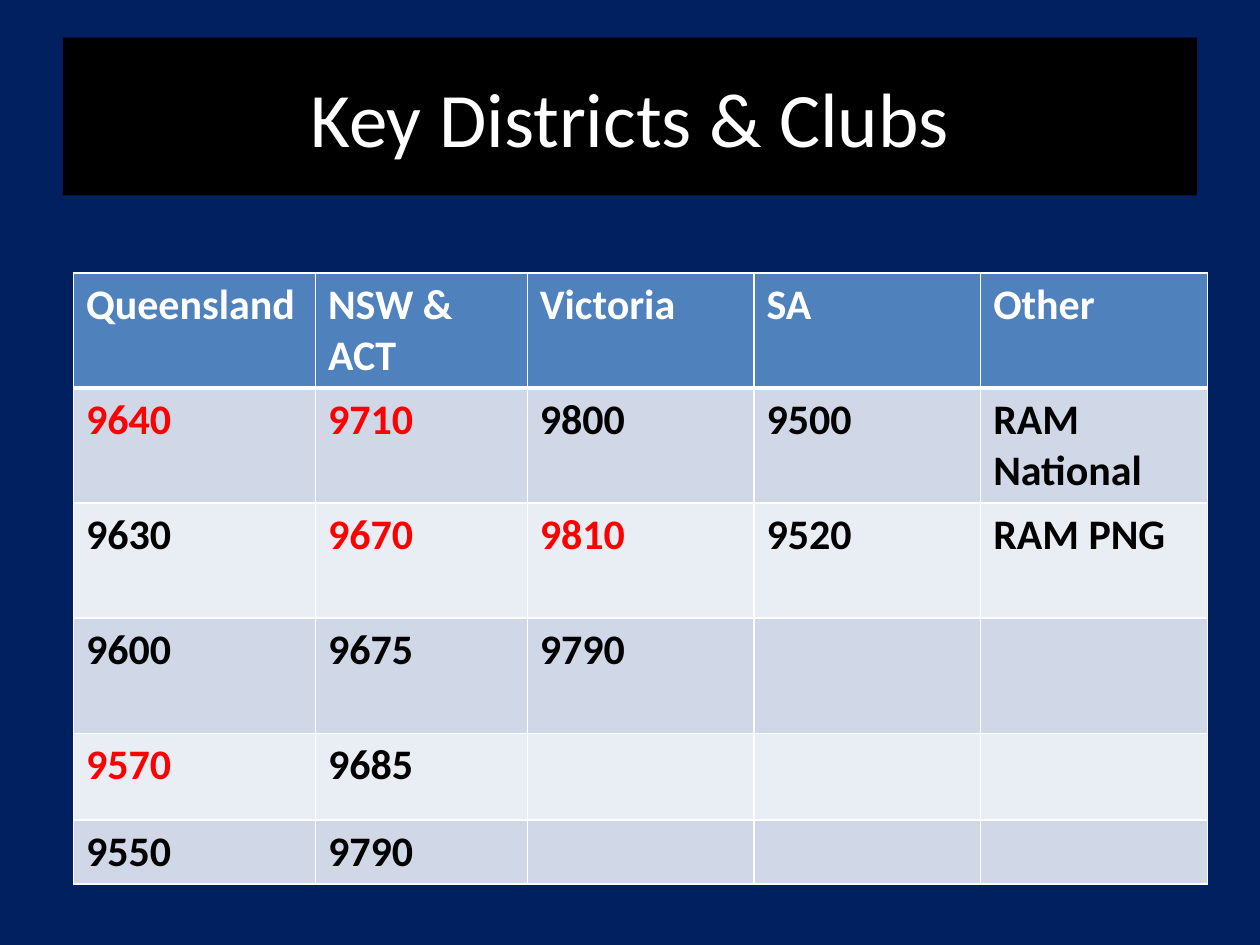
from lxml.etree import SubElement
from pptx import Presentation
from pptx.dml.color import RGBColor
from pptx.enum.shapes import MSO_SHAPE as Shape
from pptx.enum.text import MSO_ANCHOR as Anchor, PP_ALIGN as Align
from pptx.oxml.ns import qn
from pptx.util import Cm, Pt

NAVY = RGBColor(0x00, 0x20, 0x60)
BLACK = RGBColor(0x00, 0x00, 0x00)
WHITE = RGBColor(0xFF, 0xFF, 0xFF)
RED = RGBColor(0xFF, 0x00, 0x00)
HEADER_BLUE = RGBColor(0x4F, 0x81, 0xBD)
BAND_DARK = RGBColor(0xD0, 0xD8, 0xE8)
BAND_LIGHT = RGBColor(0xE9, 0xED, 0xF4)

DISTRICTS = [
    ["Queensland", "NSW & ACT", "Victoria", "SA", "Other"],
    ["9640", "9710", "9800", "9500", "RAM National"],
    ["9630", "9670", "9810", "9520", "RAM PNG"],
    ["9600", "9675", "9790", "", ""],
    ["9570", "9685", "", "", ""],
    ["9550", "9790", "", "", ""],
]
KEY_DISTRICTS = {"9640", "9710", "9670", "9810", "9570"}
COLUMN_WIDTHS = [4.88, 4.27, 4.57, 4.57, 4.57]
ROW_HEIGHTS = [2.32, 2.32, 2.32, 2.32, 1.75, 1.27]


def write_text(frame, text, font="Calibri", size=24, color=BLACK, bold=False, align=Align.LEFT):
    para = frame.paragraphs[0]
    para.alignment = align
    span = para.add_run()
    span.text = text
    span.font.name = font
    span.font.size = Pt(size)
    span.font.bold = bold
    span.font.color.rgb = color


def set_borders(cell, color, widths):
    """Draw cell edges; widths maps the edge letters L, R, T, B to points."""
    properties = cell._tc.get_or_add_tcPr()
    for index, (edge, width) in enumerate(widths.items()):
        line = properties.makeelement(qn(f"a:ln{edge}"), {"w": str(Pt(width))})
        fill = SubElement(line, qn("a:solidFill"))
        SubElement(fill, qn("a:srgbClr"), val=str(color))
        properties.insert(index, line)


class SlideBuilder:
    def __init__(self, page, font="Calibri"):
        self.page = page
        self.font = font

    def background(self, color):
        fill = self.page.background.fill
        fill.solid()
        fill.fore_color.rgb = color

    def title(self, text, left, top, width, height):
        box = self.page.shapes.add_shape(
            Shape.RECTANGLE, Cm(left), Cm(top), Cm(width), Cm(height))
        box.shadow.inherit = False
        box.fill.solid()
        box.fill.fore_color.rgb = BLACK
        box.line.fill.background()
        box.text_frame.word_wrap = True
        box.text_frame.vertical_anchor = Anchor.MIDDLE
        write_text(box.text_frame, text, font=self.font, size=44,
                   color=WHITE, align=Align.CENTER)

    def table(self, rows, left, top, widths, heights):
        table = self.page.shapes.add_table(
            len(rows), len(widths), Cm(left), Cm(top),
            Cm(sum(widths)), Cm(sum(heights))).table
        for column, width in zip(table.columns, widths):
            column.width = Cm(width)
        for row, height in zip(table.rows, heights):
            row.height = Cm(height)
        for row_index, texts in enumerate(rows):
            for column_index, text in enumerate(texts):
                self.cell(table.cell(row_index, column_index), text, row_index)

    def cell(self, cell, text, row_index):
        header = row_index == 0
        band = BAND_DARK if row_index % 2 else BAND_LIGHT
        cell.fill.solid()
        cell.fill.fore_color.rgb = HEADER_BLUE if header else band
        set_borders(cell, WHITE, {"L": 1, "R": 1, "T": 3 if row_index == 1 else 1,
                                  "B": 3 if header else 1})
        if text:
            body_color = RED if text in KEY_DISTRICTS else BLACK
            write_text(cell.text_frame, text, font=self.font, bold=True,
                       color=WHITE if header else body_color)


def main():
    deck = Presentation()
    deck.slide_width, deck.slide_height = Cm(25.4), Cm(19.05)
    builder = SlideBuilder(deck.slides.add_slide(deck.slide_layouts[6]))
    builder.background(NAVY)
    builder.title("Key Districts & Clubs", 1.27, 0.76, 22.86, 3.18)
    builder.table(DISTRICTS, 1.48, 5.5, COLUMN_WIDTHS, ROW_HEIGHTS)
    deck.save("out.pptx")


if __name__ == "__main__":
    main()
